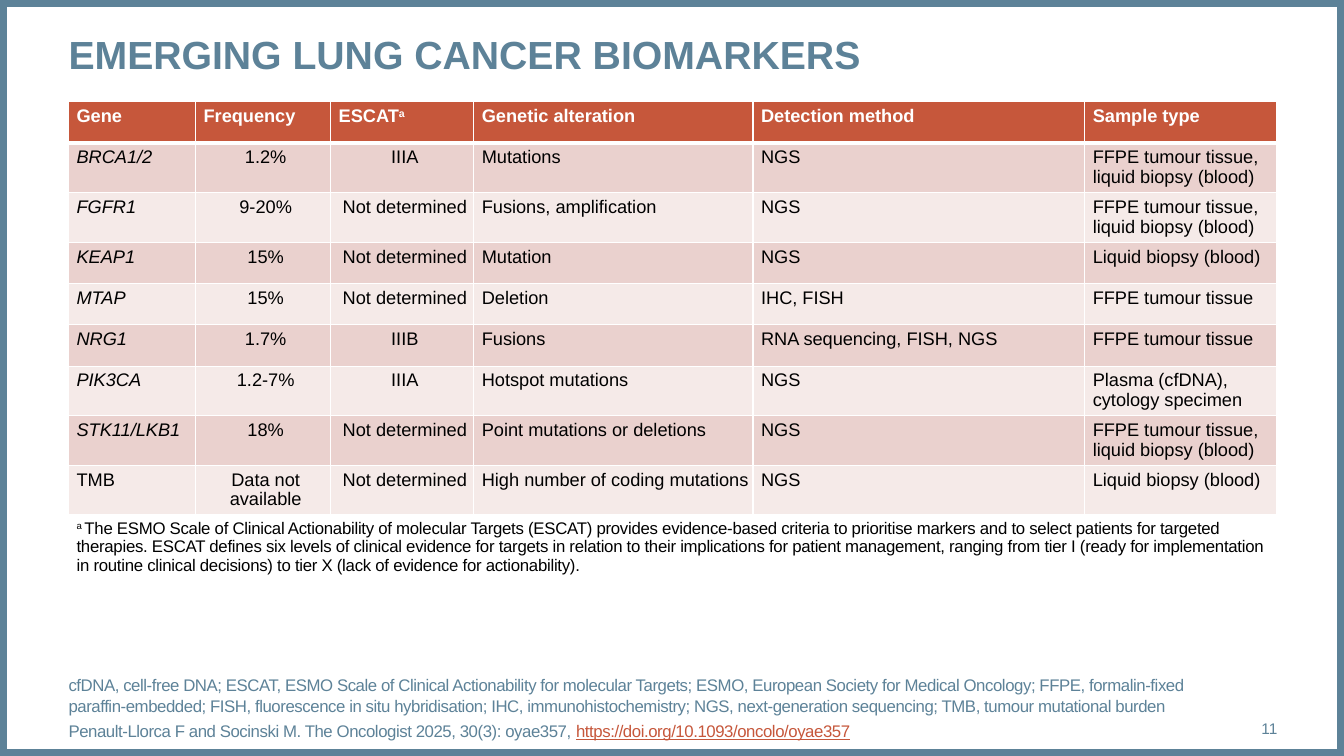
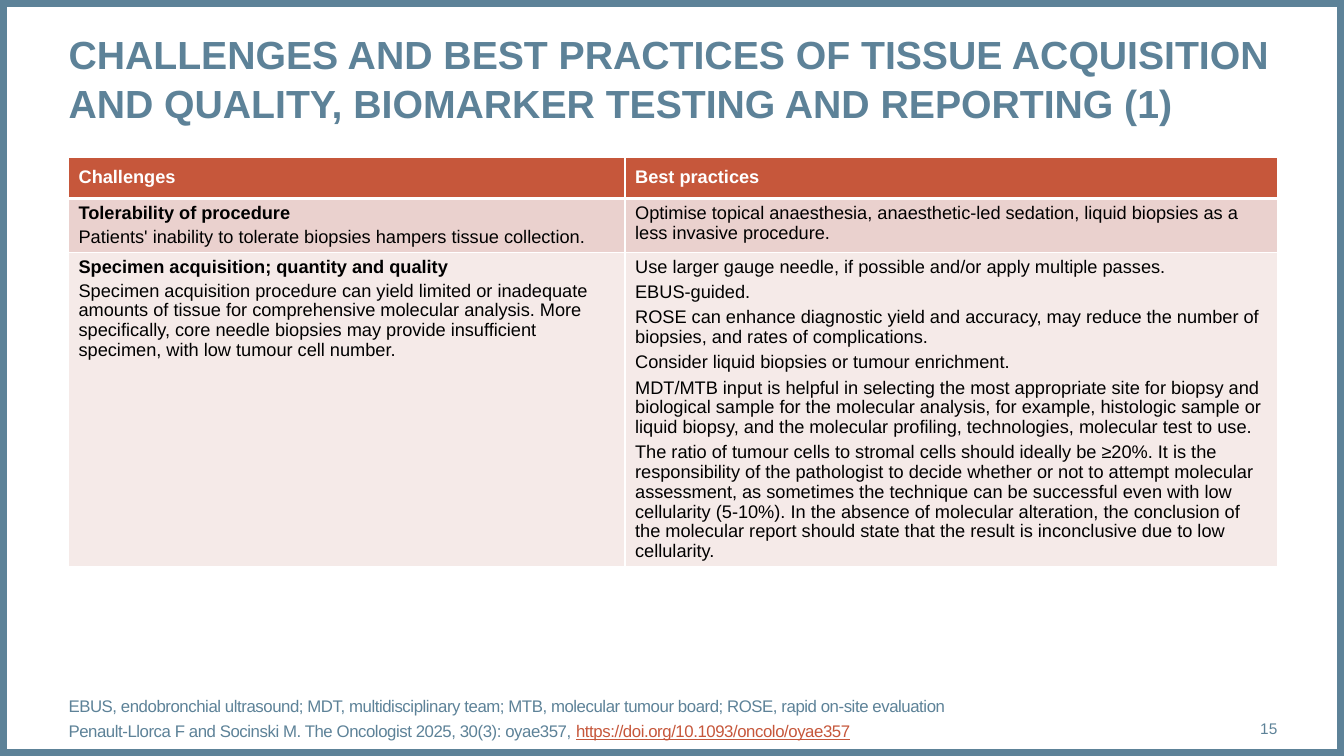
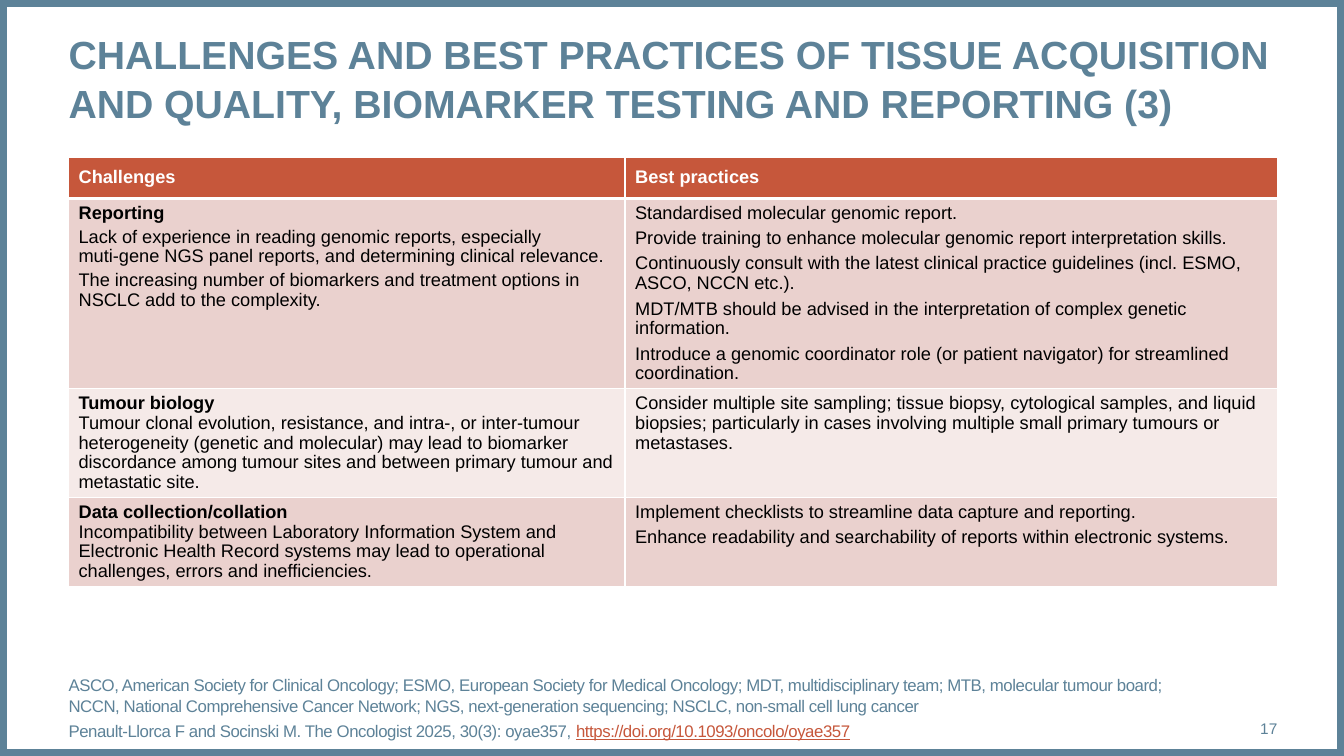
from pptx import Presentation
from pptx.dml.color import RGBColor
from pptx.enum.shapes import MSO_SHAPE
from pptx.enum.text import MSO_ANCHOR, MSO_AUTO_SIZE, PP_ALIGN
from pptx.oxml import parse_xml
from pptx.oxml.ns import nsdecls
from pptx.util import Inches, Pt

COLORS = {
    "blue": "5D8298",
    "rust": "C6573B",
    "band_dark": "EAD1CE",
    "band_light": "F5EAE8",
    "white": "FFFFFF",
    "black": "000000",
}
FONT = "Arial"
LEFT, WIDTH = 0.68, 11.99
ROW_HEIGHT = 0.41
CITATION = "Penault-Llorca F and Socinski M. The Oncologist 2025, 30(3): oyae357, "
DOI = "https://doi.org/10.1093/oncolo/oyae357"
FFPE = "FFPE tumour tissue"
BIOPSY = "Liquid biopsy (blood)"
BOTH_SAMPLES = "FFPE tumour tissue, liquid biopsy (blood)"
UNKNOWN = "Not determined"
NOTE = (
    "The ESMO Scale of Clinical Actionability of molecular Targets (ESCAT) provides "
    "evidence-based criteria to prioritise markers and to select patients for targeted "
    "therapies. ESCAT defines six levels of clinical evidence for targets in relation to "
    "their implications for patient management, ranging from tier I (ready for "
    "implementation in routine clinical decisions) to tier X (lack of evidence for "
    "actionability)."
)
PRACTICES_TITLE = (
    "CHALLENGES AND BEST PRACTICES OF TISSUE ACQUISITION AND QUALITY, "
    "BIOMARKER TESTING AND REPORTING ({})"
)
PRACTICES_HEAD = ("Challenges", "Best practices")

biomarkers = [
    ("Gene", "Frequency", "ESCAT", "Genetic alteration", "Detection method", "Sample type"),
    ("BRCA1/2", "1.2%", "IIIA", "Mutations", "NGS", BOTH_SAMPLES),
    ("FGFR1", "9-20%", UNKNOWN, "Fusions, amplification", "NGS", BOTH_SAMPLES),
    ("KEAP1", "15%", UNKNOWN, "Mutation", "NGS", BIOPSY),
    ("MTAP", "15%", UNKNOWN, "Deletion", "IHC, FISH", FFPE),
    ("NRG1", "1.7%", "IIIB", "Fusions", "RNA sequencing, FISH, NGS", FFPE),
    ("PIK3CA", "1.2-7%", "IIIA", "Hotspot mutations", "NGS",
     "Plasma (cfDNA), cytology specimen"),
    ("STK11/LKB1", "18%", UNKNOWN, "Point mutations or deletions", "NGS", BOTH_SAMPLES),
    ("TMB", "Data not available", UNKNOWN, "High number of coding mutations", "NGS", BIOPSY),
    ("", "", "", "", "", ""),
]
acquisition = [
    PRACTICES_HEAD,
    (
        "Tolerability of procedure\n"
        "Patients' inability to tolerate biopsies hampers tissue collection.",
        "Optimise topical anaesthesia, anaesthetic-led sedation, liquid biopsies as a less "
        "invasive procedure.",
    ),
    (
        "Specimen acquisition; quantity and quality\n"
        "Specimen acquisition procedure can yield limited or inadequate amounts of tissue "
        "for comprehensive molecular analysis. More specifically, core needle biopsies may "
        "provide insufficient specimen, with low tumour cell number.",
        "\n".join([
            "Use larger gauge needle, if possible and/or apply multiple passes.",
            "EBUS-guided.",
            "ROSE can enhance diagnostic yield and accuracy, may reduce the number of "
            "biopsies, and rates of complications.",
            "Consider liquid biopsies or tumour enrichment.",
            "MDT/MTB input is helpful in selecting the most appropriate site for biopsy and "
            "biological sample for the molecular analysis, for example, histologic sample or "
            "liquid biopsy, and the molecular profiling, technologies, molecular test to use.",
            "The ratio of tumour cells to stromal cells should ideally be ≥20%. It is the "
            "responsibility of the pathologist to decide whether or not to attempt molecular "
            "assessment, as sometimes the technique can be successful even with low "
            "cellularity (5-10%). In the absence of molecular alteration, the conclusion of "
            "the molecular report should state that the result is inconclusive due to low "
            "cellularity.",
        ]),
    ),
]
reporting = [
    PRACTICES_HEAD,
    (
        "Reporting\n"
        "Lack of experience in reading genomic reports, especially muti‑gene NGS panel "
        "reports, and determining clinical relevance.\n"
        "The increasing number of biomarkers and treatment options in NSCLC add to the "
        "complexity.",
        "Standardised molecular genomic report.\n"
        "Provide training to enhance molecular genomic report interpretation skills.\n"
        "Continuously consult with the latest clinical practice guidelines (incl. ESMO, "
        "ASCO, NCCN etc.).\n"
        "MDT/MTB should be advised in the interpretation of complex genetic information.\n"
        "Introduce a genomic coordinator role (or patient navigator) for streamlined "
        "coordination.",
    ),
    (
        "Tumour biology\n"
        "Tumour clonal evolution, resistance, and intra-, or inter-tumour heterogeneity "
        "(genetic and molecular) may lead to biomarker discordance among tumour sites and "
        "between primary tumour and metastatic site.",
        "Consider multiple site sampling; tissue biopsy, cytological samples, and liquid "
        "biopsies; particularly in cases involving multiple small primary tumours or "
        "metastases.",
    ),
    (
        "Data collection/collation\n"
        "Incompatibility between Laboratory Information System and Electronic Health Record "
        "systems may lead to operational challenges, errors and inefficiencies.",
        "Implement checklists to streamline data capture and reporting.\n"
        "Enhance readability and searchability of reports within electronic systems.",
    ),
]
slides = [
    {
        "title": "EMERGING LUNG CANCER BIOMARKERS",
        "number": "11",
        "top": 1.01,
        "cols": (1.26, 1.34, 1.42, 2.77, 3.29, 1.9),
        "rows": biomarkers,
        "abbreviations":
            "cfDNA, cell-free DNA; ESCAT, ESMO Scale of Clinical Actionability for molecular "
            "Targets; ESMO, European Society for Medical Oncology; FFPE, formalin-fixed "
            "paraffin-embedded; FISH, fluorescence in situ hybridisation; IHC, "
            "immunohistochemistry; NGS, next-generation sequencing; TMB, tumour mutational "
            "burden",
    },
    {
        "title": PRACTICES_TITLE.format(1),
        "number": "15",
        "top": 1.56,
        "cols": (5.52, 6.47),
        "rows": acquisition,
        "abbreviations":
            "EBUS, endobronchial ultrasound; MDT, multidisciplinary team; MTB, molecular "
            "tumour board; ROSE, rapid on-site evaluation",
    },
    {
        "title": PRACTICES_TITLE.format(3),
        "number": "17",
        "top": 1.56,
        "cols": (5.52, 6.47),
        "rows": reporting,
        "abbreviations":
            "ASCO, American Society for Clinical Oncology; ESMO, European Society for Medical "
            "Oncology; MDT, multidisciplinary team; MTB, molecular tumour board; NCCN, "
            "National Comprehensive Cancer Network; NGS, next-generation sequencing; NSCLC, "
            "non-small cell lung cancer",
    },
]


def style_run(r, size, color, bold=False, italic=False, spacing=0, raised=False):
    r.font.name = FONT
    r.font.size = Pt(size)
    r.font.bold = bold
    r.font.italic = italic
    r.font.color.rgb = RGBColor.from_string(COLORS[color])
    if spacing:
        r.font._element.set("spc", str(spacing))
    if raised:
        r.font._element.set("baseline", "30000")


def prepare_frame(tf, anchor):
    tf.word_wrap = True
    tf.auto_size = MSO_AUTO_SIZE.NONE
    tf.vertical_anchor = anchor
    tf.margin_left = tf.margin_right = tf.margin_top = tf.margin_bottom = 0


prs = Presentation()
prs.slide_width = Inches(13.33)
prs.slide_height = Inches(7.5)

for content in slides:
    s = prs.slides.add_slide(prs.slide_layouts[5])

    frame = s.shapes.add_shape(MSO_SHAPE.RECTANGLE, 0, 0, prs.slide_width, prs.slide_height)
    frame.shadow.inherit = False
    frame.fill.background()
    frame.line.color.rgb = RGBColor.from_string(COLORS["blue"])
    frame.line.width = Pt(10)

    title = s.shapes.title
    title.left, title.top = Inches(LEFT), Inches(0.28)
    title.width, title.height = Inches(WIDTH), Inches(0.94)
    prepare_frame(title.text_frame, MSO_ANCHOR.TOP)
    title.text_frame.text = content["title"]
    p = title.text_frame.paragraphs[0]
    p.alignment = PP_ALIGN.LEFT
    p.line_spacing = 1.04
    style_run(p.runs[0], 28, "blue", bold=True)

    number = s.shapes.add_textbox(Inches(11.81), Inches(7.03), Inches(0.86), Inches(0.4))
    prepare_frame(number.text_frame, MSO_ANCHOR.MIDDLE)
    number.text_frame.text = content["number"]
    p = number.text_frame.paragraphs[0]
    p.alignment = PP_ALIGN.RIGHT
    style_run(p.runs[0], 11, "blue")

    footer = s.shapes.add_textbox(Inches(LEFT), Inches(6.95), Inches(11.13), Inches(0.4))
    tf = footer.text_frame
    prepare_frame(tf, MSO_ANCHOR.BOTTOM)
    tf.text = content["abbreviations"] + "\n" + CITATION
    for p in tf.paragraphs:
        p.line_spacing = 1.04
        style_run(p.runs[0], 12, "blue", spacing=-30)
    p = tf.paragraphs[1]
    p.space_before = Pt(3)
    r = p.add_run()
    r.text = DOI
    style_run(r, 12, "rust", spacing=-30)
    r.font.underline = True

    rows, cols = content["rows"], content["cols"]
    is_biomarkers = rows is biomarkers
    table = s.shapes.add_table(
        len(rows), len(cols), Inches(LEFT), Inches(content["top"]),
        Inches(sum(cols)), Inches(ROW_HEIGHT * len(rows)),
    ).table
    for column, width in zip(table.columns, cols):
        column.width = Inches(width)

    for i, row in enumerate(rows):
        table.rows[i].height = Inches(ROW_HEIGHT)
        is_note = is_biomarkers and i == len(rows) - 1
        for j, text in enumerate(row):
            cell = table.cell(i, j)
            if is_biomarkers:
                cell.margin_left, cell.margin_right = Inches(0.08), Inches(0.03)
            elif i == 0:
                cell.vertical_anchor = MSO_ANCHOR.MIDDLE
            tcPr = cell._tc.get_or_add_tcPr()
            for side in "LRTB":
                heavy = (i, side) in ((0, "B"), (1, "T"))
                tcPr.append(parse_xml(
                    f'<a:ln{side} {nsdecls("a")} w="{Pt(3 if heavy else 1)}"><a:solidFill>'
                    f'<a:srgbClr val="{COLORS["white"]}"/></a:solidFill></a:ln{side}>'
                ))
            band = "rust" if i == 0 else "band_dark" if i % 2 else "band_light"
            cell.fill.solid()
            cell.fill.fore_color.rgb = RGBColor.from_string(COLORS["white" if is_note else band])
            if is_note:
                continue

            cell.text_frame.text = text
            paragraphs = cell.text_frame.paragraphs
            for k, p in enumerate(paragraphs):
                p.line_spacing = 0.97
                is_heading = not is_biomarkers and j == 0 and k == 0
                if is_biomarkers and i > 0 and j in (1, 2):
                    p.alignment = PP_ALIGN.CENTER
                if k < len(paragraphs) - 1:
                    tight = rows is reporting and i > 1
                    p.space_after = Pt(4 if j else 0 if tight else 3)
                style_run(
                    p.runs[0], 13, "black" if i else "white",
                    bold=i == 0 or is_heading,
                    italic=is_biomarkers and i > 0 and j == 0 and text != "TMB",
                )

    if is_biomarkers:
        r = table.cell(0, 2).text_frame.paragraphs[0].add_run()
        r.text = "a"
        style_run(r, 13, "white", bold=True, raised=True)

        last = len(rows) - 1
        note = table.cell(last, 0)
        note.merge(table.cell(last, len(cols) - 1))
        p = note.text_frame.paragraphs[0]
        p.line_spacing = 0.97
        for text, raised in (("a ", True), (NOTE, False)):
            r = p.add_run()
            r.text = text
            style_run(r, 12, "black", spacing=-20, raised=raised)

prs.save("out.pptx")
